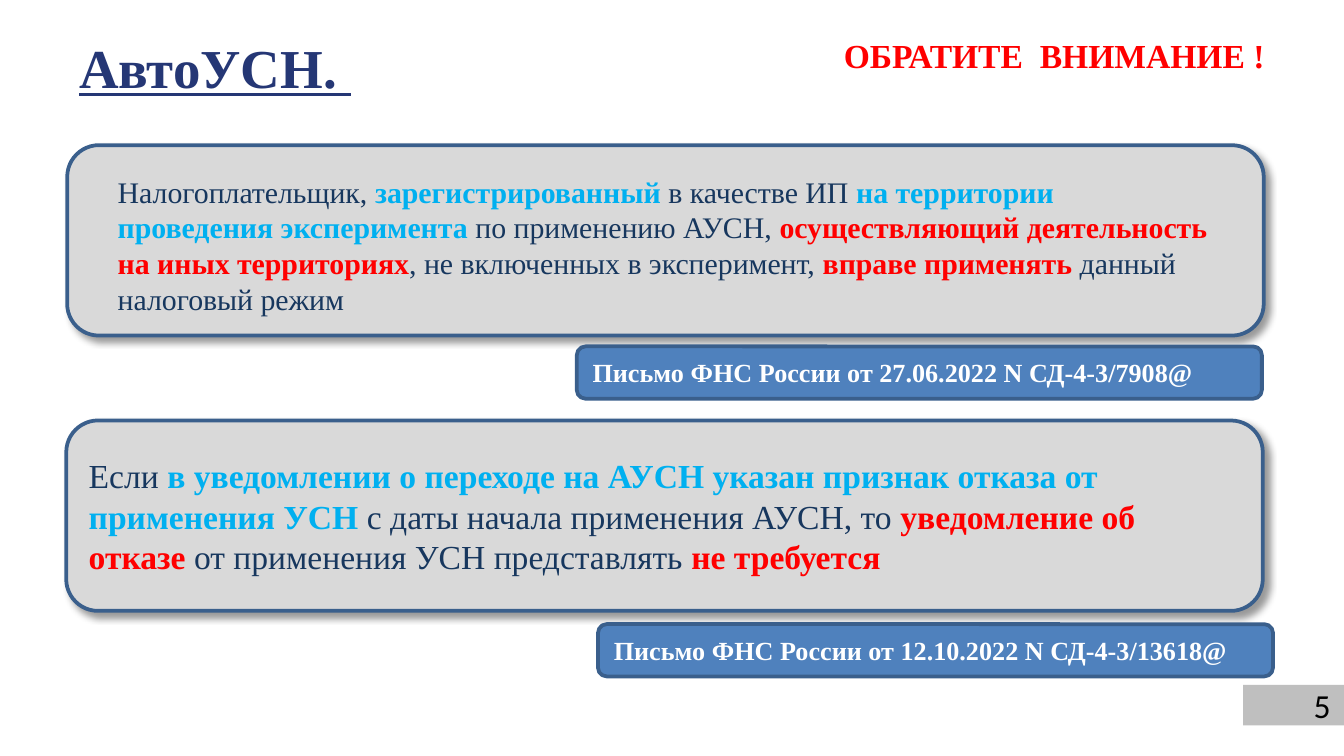
from lxml import etree
from pptx import Presentation
from pptx.dml.color import RGBColor
from pptx.enum.shapes import MSO_SHAPE as SHAPE
from pptx.enum.text import MSO_ANCHOR as ANCHOR, PP_ALIGN as ALIGN
from pptx.oxml.ns import qn
from pptx.util import Pt

COLORS = {
    "title": "253775", "body": "17375E", "accent": "00B0F0", "alert": "FF0000",
    "panel": "D9D9D9", "label": "4F81BD", "border": "3A5F8C",
    "number": "BFBFBF", "white": "FFFFFF", "black": "000000",
}
SERIF = "Times New Roman"


def rgb(name):
    return RGBColor.from_string(COLORS[name])


def write(sp, runs, size, color="body", bold=False, underline=False, font=SERIF,
          align=ALIGN.LEFT, anchor=ANCHOR.MIDDLE, wrap=True):
    """Fill a shape with text: a string, or (text, color) pairs where a color means bold."""
    tf = sp.text_frame
    tf.word_wrap = wrap
    tf.vertical_anchor = anchor
    p = tf.paragraphs[0]
    p.alignment = align
    if isinstance(runs, str):
        runs = [(runs, None)]
    for text, emphasis in runs:
        r = p.add_run()
        r.text = text
        r.font.name = font
        r.font.size = Pt(size)
        r.font.bold = bold or emphasis is not None
        r.font.underline = underline
        r.font.color.rgb = rgb(emphasis or color)
    return tf


def add_text(s, box, runs, size, **fmt):
    sp = s.shapes.add_textbox(*map(Pt, box))
    return write(sp, runs, size, **fmt)


def add_box(s, box, fill, kind=SHAPE.ROUNDED_RECTANGLE, border=True):
    sp = s.shapes.add_shape(kind, *map(Pt, box))
    sp.shadow.inherit = False
    sp.fill.solid()
    sp.fill.fore_color.rgb = rgb(fill)
    if border:
        sp.line.color.rgb = rgb("border")
        sp.line.width = Pt(2)
    else:
        sp.line.fill.background()
    return sp


def add_panel(s, left, top):
    """Grey rounded panel with a soft shadow to the lower right."""
    sp = add_box(s, (left, top, 641, 102), "panel")
    effects = sp._element.spPr.find(qn("a:effectLst"))
    shadow = etree.SubElement(effects, qn("a:outerShdw"), blurRad=str(Pt(4)),
                              dist=str(Pt(3)), dir="2700000", algn="tl", rotWithShape="0")
    color = etree.SubElement(shadow, qn("a:prstClr"), val="black")
    etree.SubElement(color, qn("a:alpha"), val="40000")
    return sp


def add_letter(s, left, top, width, text):
    write(add_box(s, (left, top, width, 28), "label"), text, 14, color="white", bold=True)


def main():
    prs = Presentation()
    prs.slide_width, prs.slide_height = Pt(720), Pt(405)
    s = prs.slides.add_slide(prs.slide_layouts[6])

    number = add_box(s, (666, 367, 54, 21.6), "number", SHAPE.RECTANGLE, border=False)
    write(number, "5", 18, color="black", font="Calibri", align=ALIGN.RIGHT)

    tf = add_text(s, (37.4, 10, 306, 45.4), "АвтоУСН. ", 29.4, color="title",
                  bold=True, underline=True, anchor=ANCHOR.BOTTOM)
    tf.margin_left = tf.margin_right = Pt(5)
    tf.margin_top = tf.margin_bottom = Pt(2)
    add_text(s, (445, 15.1, 242, 29), "ОБРАТИТЕ  ВНИМАНИЕ !", 18, color="alert",
             bold=True, anchor=ANCHOR.TOP, wrap=False)

    add_panel(s, 36, 77.8)
    add_text(s, (56, 89.3, 601, 85), [
        ("Налогоплательщик, ", None),
        ("зарегистрированный ", "accent"),
        ("в качестве ИП ", None),
        ("на территории проведения эксперимента ", "accent"),
        ("по применению АУСН, ", None),
        ("осуществляющий деятельность на иных территориях", "alert"),
        (", не включенных в эксперимент, ", None),
        ("вправе применять ", "alert"),
        ("данный налоговый режим", None),
    ], 16, anchor=ANCHOR.TOP)
    add_letter(s, 309, 185.6, 367, "Письмо ФНС России от 27.06.2022 N СД-4-3/7908@")

    write(add_panel(s, 35.5, 225.3), [
        ("Если ", None),
        ("в уведомлении о переходе на АУСН указан признак отказа от применения УСН ", "accent"),
        ("с даты начала применения АУСН, то ", None),
        ("уведомление об отказе ", "alert"),
        ("от применения УСН представлять ", None),
        ("не требуется", "alert"),
    ], 18)
    add_letter(s, 320.4, 334.4, 361.6, "Письмо ФНС России от 12.10.2022 N СД-4-3/13618@")

    prs.save("out.pptx")


if __name__ == "__main__":
    main()
